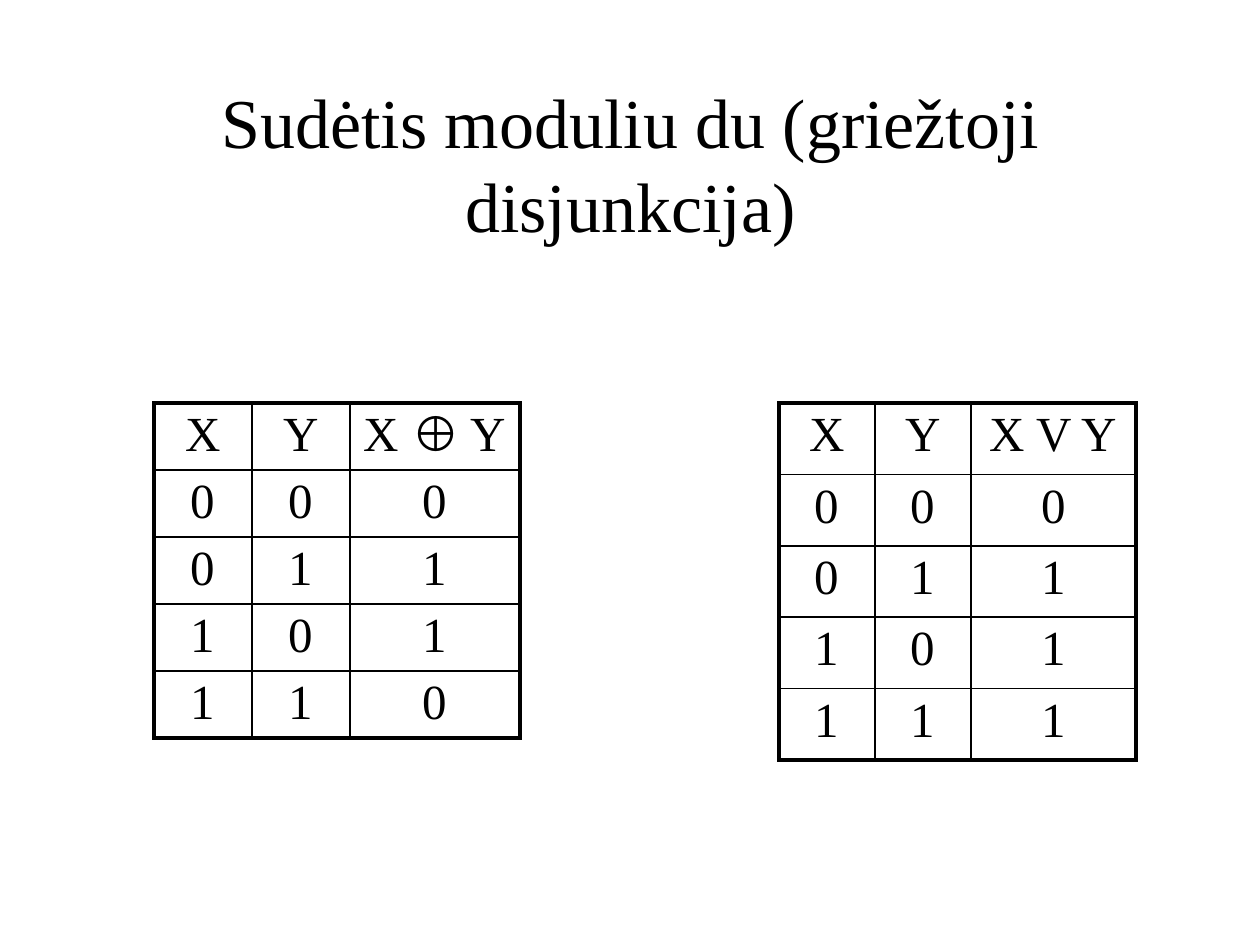
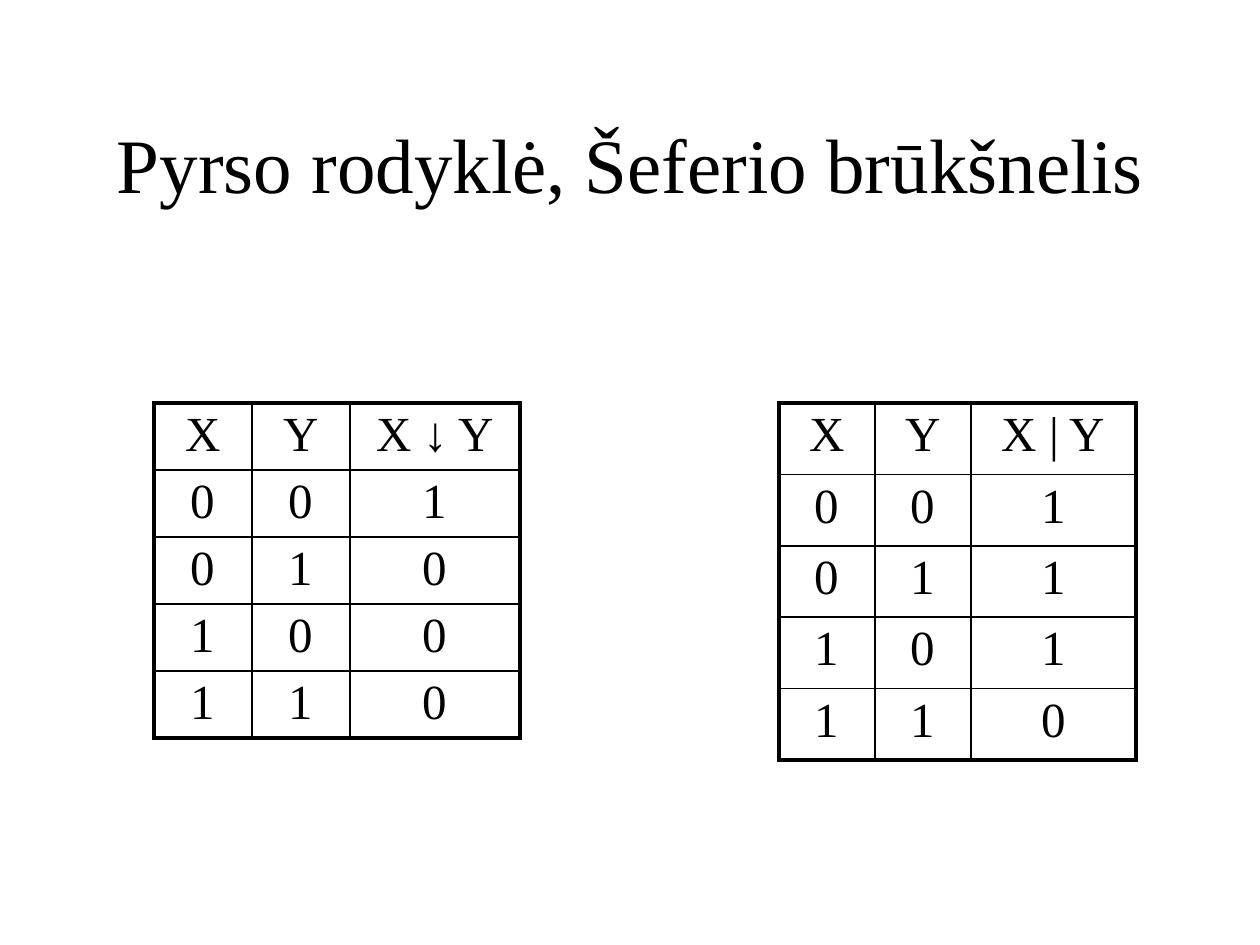
from lxml import etree
from pptx import Presentation
from pptx.dml.color import RGBColor
from pptx.enum.text import MSO_ANCHOR, MSO_AUTO_SIZE, PP_ALIGN
from pptx.oxml.ns import qn
from pptx.util import Pt

PX = 914400 // 126
SIZE = 1260, 945
TITLE = 95, 84, 1071, 158
FONT, INK = "Times New Roman", "000000"
THICK, THIN = 2.25, 1
CENTER, MIDDLE, FIXED = PP_ALIGN.CENTER, MSO_ANCHOR.MIDDLE, MSO_AUTO_SIZE.NONE

INPUTS = ["00", "01", "10", "11"]
SLIDES = [
    ("Sudėtis moduliu du (griežtoji disjunkcija)", 40,
     [("X ⊕ Y", "0110"), ("X V Y", "0111")]),
    ("Pyrso rodyklė, Šeferio brūkšnelis", 44,
     [("X ↓ Y", "1000"), ("X | Y", "1110")]),
]
# left, top, column widths, height
GRIDS = [
    (154, 403, (98, 98, 170), 335),
    (779, 403, (96, 96, 165), 357),
]
PAD = {"margin_left": 10, "margin_right": 10, "margin_top": 5, "margin_bottom": 5}


def color(code):
    return RGBColor.from_string(code)


def write(frame, text, size):
    frame.text = text
    par = frame.paragraphs[0]
    par.alignment = CENTER
    font = par.runs[0].font
    for key, value in {"name": FONT, "size": Pt(size), "bold": False}.items():
        setattr(font, key, value)
    font.color.rgb = color(INK)


def edge(cell, sides):
    """Draw cell borders; sides maps L, R, T, B to widths in points."""
    props = cell._tc.get_or_add_tcPr()
    for spot, (side, width) in enumerate(sides.items()):
        line = etree.Element(qn(f"a:ln{side}"), w=str(Pt(width)))
        fill = etree.SubElement(line, qn("a:solidFill"))
        etree.SubElement(fill, qn("a:srgbClr"), val=INK)
        props.insert(spot, line)


def add_truth(slide, grid, head, results):
    left, top, widths, height = grid
    rows = [["X", "Y", head]]
    rows += [[*pair, value] for pair, value in zip(INPUTS, results)]
    last_row, last_col = len(rows) - 1, len(widths) - 1
    table = slide.shapes.add_table(
        len(rows), len(widths), left * PX, top * PX,
        sum(widths) * PX, height * PX).table
    table.first_row = table.horz_banding = False
    for col, width in zip(table.columns, widths):
        col.width = width * PX
    for r, row in enumerate(rows):
        table.rows[r].height = height * PX // len(rows)
        for c, text in enumerate(row):
            cell = table.cell(r, c)
            for key, value in PAD.items():
                setattr(cell, key, value * PX)
            write(cell.text_frame, text, 28)
            cell.fill.background()
            outer = {"L": c == 0, "R": c == last_col,
                     "T": r == 0, "B": r == last_row}
            edge(cell, {side: THICK if out else THIN
                        for side, out in outer.items()})


def main():
    deck = Presentation()
    deck.slide_width, deck.slide_height = (n * PX for n in SIZE)
    for text, size, tables in SLIDES:
        slide = deck.slides.add_slide(deck.slide_layouts[5])
        title = slide.shapes.title
        for key, value in zip(("left", "top", "width", "height"), TITLE):
            setattr(title, key, value * PX)
        frame = title.text_frame
        frame.auto_size, frame.vertical_anchor = FIXED, MIDDLE
        write(frame, text, size)
        for grid, (head, results) in zip(GRIDS, tables):
            add_truth(slide, grid, head, results)
    deck.save("out.pptx")


if __name__ == "__main__":
    main()
